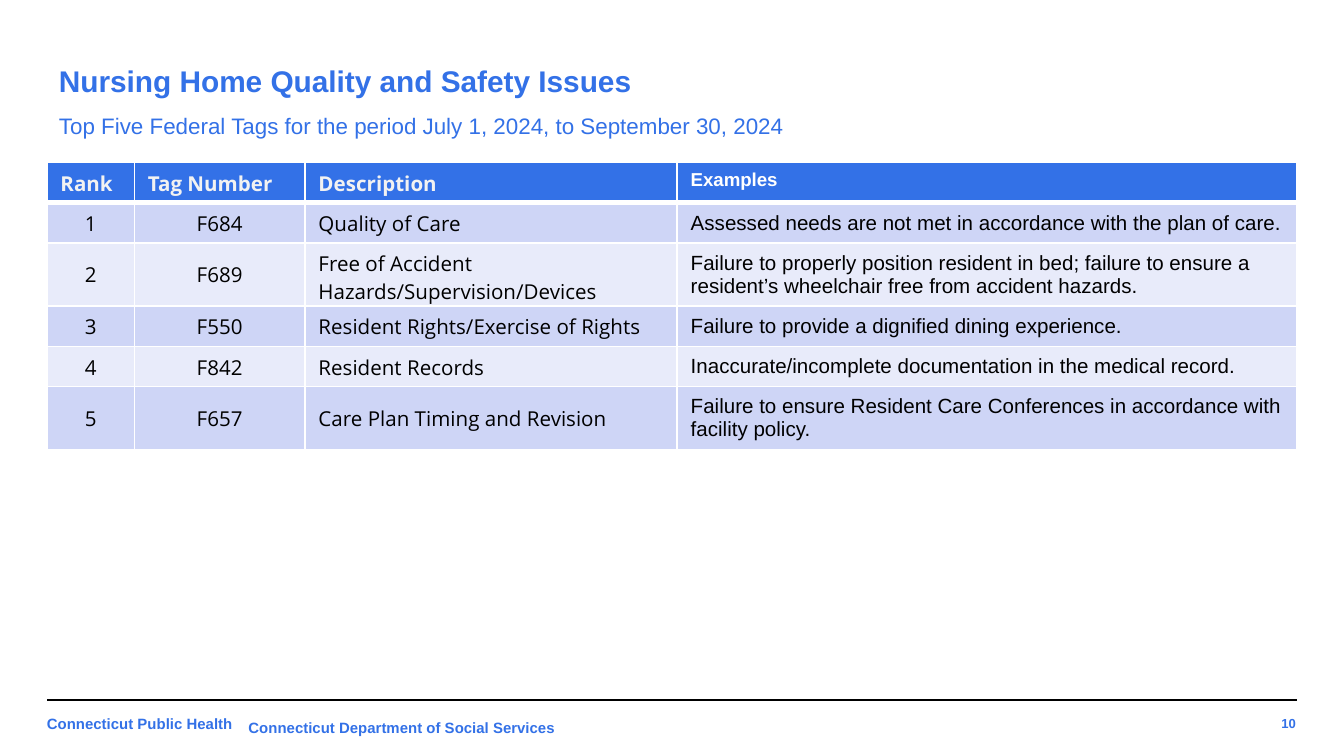
from lxml.etree import SubElement
from pptx import Presentation
from pptx.dml.color import RGBColor
from pptx.enum.shapes import MSO_CONNECTOR
from pptx.enum.text import MSO_ANCHOR as ANCHOR, PP_ALIGN as ALIGN
from pptx.oxml.ns import qn
from pptx.util import Pt

COLORS = {
    "blue": "3371E7",
    "black": "000000",
    "white": "FFFFFF",
    "header_text": "F2F2F2",
    "band_dark": "CED5F6",
    "band_light": "E8EBFA",
}
HEADERS = ["Rank", "Tag Number", "Description", "Examples"]
TAGS = [
    ("F684", "Quality of Care",
     "Assessed needs are not met in accordance with the plan of care."),
    ("F689", "Free of Accident Hazards/Supervision/Devices",
     "Failure to properly position resident in bed; failure to ensure a "
     "resident’s wheelchair free from accident hazards."),
    ("F550", "Resident Rights/Exercise of Rights",
     "Failure to provide a dignified dining experience."),
    ("F842", "Resident Records",
     "Inaccurate/incomplete documentation in the medical record."),
    ("F657", "Care Plan Timing and Revision",
     "Failure to ensure Resident Care Conferences in accordance with "
     "facility policy."),
]
COL_WIDTHS = [46.8, 91.44, 199.44, 331.92]
ROW_HEIGHT = 21.6


def rgb(name):
    return RGBColor.from_string(COLORS[name])


def add_text(p, text, size=8, font="Arial", color="blue", bold=True, align=ALIGN.LEFT):
    p.alignment = align
    r = p.add_run()
    r.text = text
    r.font.size = Pt(size)
    r.font.name = font
    r.font.bold = bold
    r.font.color.rgb = rgb(color)


def add_box(s, box, anchor=ANCHOR.TOP, inset=7.2, wrap=True):
    tf = s.shapes.add_textbox(*map(Pt, box)).text_frame
    tf.word_wrap = wrap
    tf.vertical_anchor = anchor
    tf.margin_top = tf.margin_bottom = Pt(inset)
    return tf.paragraphs[0]


def add_title(s, box):
    p = add_box(s, box, anchor=ANCHOR.MIDDLE)
    p.line_spacing = 1.5
    p.space_after = Pt(6)
    add_text(p, "Nursing Home Quality and Safety Issues", size=16)
    p.add_line_break()
    add_text(p, "Top Five Federal Tags for the period July 1,\u00a02024,\u00a0to September 30, 2024",
             size=12, bold=False)


def set_borders(cell, **widths):
    tc_pr = cell._tc.get_or_add_tcPr()
    for side in "LRTB":
        ln = SubElement(tc_pr, qn(f"a:ln{side}"), w=str(Pt(widths.get(side, 1))))
        fill = SubElement(ln, qn("a:solidFill"))
        SubElement(fill, qn("a:srgbClr"), val=COLORS["white"])


def fill_cell(cell, color):
    cell.fill.solid()
    cell.fill.fore_color.rgb = rgb(color)


def add_tag_table(s, box):
    table = s.shapes.add_table(len(TAGS) + 1, len(HEADERS), *map(Pt, box)).table
    for col, width in zip(table.columns, COL_WIDTHS):
        col.width = Pt(width)
    for row in table.rows:
        row.height = Pt(ROW_HEIGHT)

    last = len(HEADERS) - 1
    for j, header in enumerate(HEADERS):
        cell = table.cell(0, j)
        set_borders(cell, B=3)
        fill_cell(cell, "blue")
        style = (dict(size=10, color="white") if j == last
                 else dict(size=11, font="Open Sans", color="header_text"))
        add_text(cell.text_frame.paragraphs[0], header, **style)

    for i, tag in enumerate(TAGS, 1):
        for j, text in enumerate((str(i), *tag)):
            cell = table.cell(i, j)
            set_borders(cell, T=3 if i == 1 else 1)
            fill_cell(cell, "band_dark" if i % 2 else "band_light")
            cell.vertical_anchor = ANCHOR.MIDDLE
            add_text(cell.text_frame.paragraphs[0], text, size=11, color="black", bold=False,
                     font="Arial" if j == last else "Open Sans",
                     align=ALIGN.CENTER if j < 2 else ALIGN.LEFT)


def add_footer(s, box):
    x, y, w, h = box
    line = s.shapes.add_connector(MSO_CONNECTOR.STRAIGHT, Pt(x + w), Pt(y), Pt(x), Pt(y))
    line.line.color.rgb = rgb("black")
    line.line.width = Pt(0.75)
    SubElement(line._element.spPr, qn("a:effectLst"))

    add_text(add_box(s, (x - 7.2, y + 2.88, 236.16, 24.48)), "Connecticut Public Health")
    add_text(add_box(s, (x + 100.8, y + 6.48, 180.72, 17.28), inset=3.6, wrap=False),
             "Connecticut Department of Social Services")
    add_text(add_box(s, (x + w - 36.72, y + 3.6, 43.2, 18), anchor=ANCHOR.MIDDLE),
             "10", size=7, align=ALIGN.RIGHT)


def main():
    prs = Presentation()
    prs.slide_width, prs.slide_height = Pt(720), Pt(405)
    s = prs.slides.add_slide(prs.slide_layouts[6])
    add_footer(s, (25.2, 375.12, 669.6, 28))
    add_title(s, (24.48, 18, 671.04, 62.64))
    add_tag_table(s, (25.2, 87.12, sum(COL_WIDTHS), ROW_HEIGHT * (len(TAGS) + 1)))
    prs.save("out.pptx")


if __name__ == "__main__":
    main()
